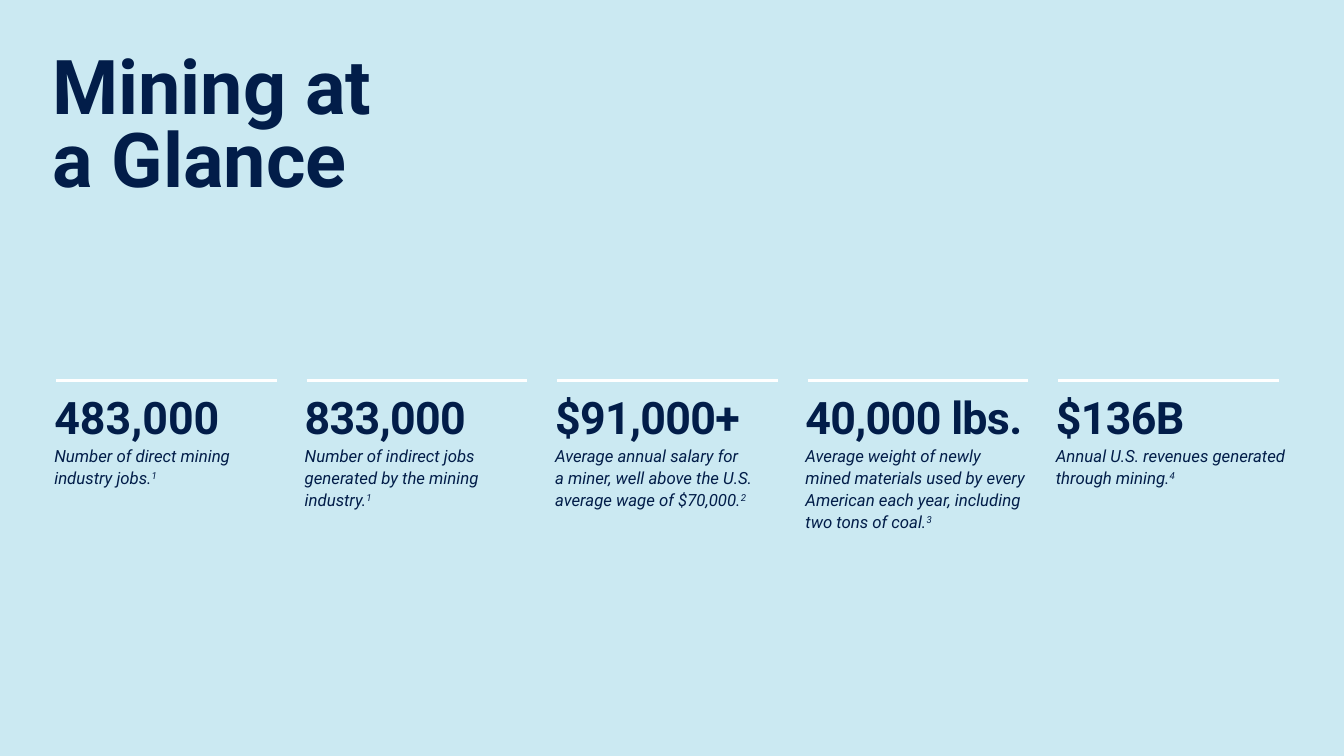
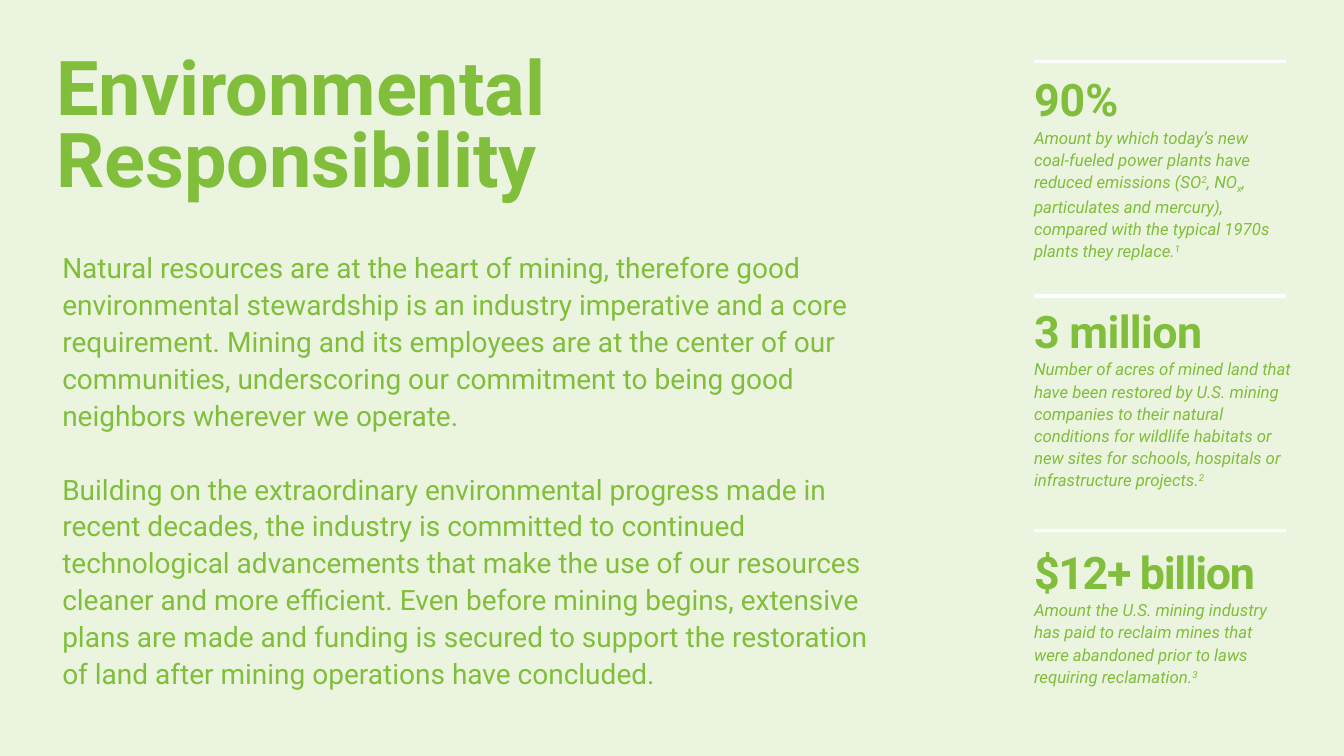
from dataclasses import dataclass
from typing import Any, NamedTuple

from pptx import Presentation
from pptx.dml.color import RGBColor
from pptx.enum.shapes import MSO_CONNECTOR
from pptx.enum.text import MSO_AUTO_SIZE
from pptx.oxml.ns import qn
from pptx.util import Cm, Pt
from lxml import etree

STRAIGHT = MSO_CONNECTOR.STRAIGHT
FIT_SHAPE = MSO_AUTO_SIZE.SHAPE_TO_FIT_TEXT
SUPERSCRIPT = 30
SUBSCRIPT = -25


@dataclass(frozen=True)
class Theme:
    font: str = "Roboto"
    navy: RGBColor = RGBColor(0x02, 0x1D, 0x49)
    pale_blue: RGBColor = RGBColor(0xCB, 0xE9, 0xF2)
    green: RGBColor = RGBColor(0x80, 0xBE, 0x3B)
    pale_green: RGBColor = RGBColor(0xEB, 0xF4, 0xDE)
    rule: RGBColor = RGBColor(0xFF, 0xFF, 0xFF)
    rule_width: Pt = Pt(2.25)
    title_size: Pt = Pt(54)
    figure_size: Pt = Pt(32)
    body_size: Pt = Pt(20)
    caption_size: Pt = Pt(12)
    body_gap: Pt = Pt(26.4)


THEME = Theme()


class Style(NamedTuple):
    font: dict[str, Any]
    paragraph: dict[str, Any]


TITLE = Style({"size": THEME.title_size, "bold": True}, {"line_spacing": 0.8})
FIGURE = Style({"size": THEME.figure_size, "bold": True}, {})
CAPTION = Style({"size": THEME.caption_size, "italic": True}, {"line_spacing": 1.1})
BODY = Style({"size": THEME.body_size}, {"line_spacing": 1.1})
BODY_NEXT = Style(BODY.font, {"line_spacing": 1.1, "space_before": THEME.body_gap})


class Piece(NamedTuple):
    text: str
    baseline: int = 0


class Block(NamedTuple):
    pieces: list[Piece]
    style: Style
    tracking: float = 0


class Box(NamedTuple):
    left: float
    top: float
    width: float
    height: float


@dataclass(frozen=True)
class Stat:
    figure: str
    caption: list[Piece]
    width: float
    height: float
    tracking: float = -0.5
    top: float = 9.7


def noted(text: str, note: str) -> list[Piece]:
    return [Piece(text), Piece(note, SUPERSCRIPT)]


GLANCE_STATS = [
    Stat("483,000", noted("Number of direct mining industry jobs.", "1"),
         5.77, 2.72, tracking=0),
    Stat("833,000", noted("Number of indirect jobs generated by the mining industry.", "1"),
         5.94, 3.28),
    Stat("$91,000+", noted("Average annual salary for\na miner, well above the U.S. "
                           "average wage of $70,000.", "2"), 5.94, 3.28),
    Stat("40,000 lbs.", noted("Average weight of newly\nmined materials used by every "
                              "American each year, including two tons of coal.", "3"),
         6.53, 3.86),
    Stat("$136B", noted("Annual U.S. revenues generated through mining.", "4"), 6.53, 2.74),
]

ENVIRONMENT_STATS = [
    Stat("90%", [
        Piece("Amount by which today’s new coal-fueled power plants have "
              "reduced emissions (SO"),
        Piece("2", SUPERSCRIPT),
        Piece(", NO"),
        Piece("x", SUBSCRIPT),
        Piece(", particulates and mercury), compared with the typical 1970s "
              "plants they replace."),
        Piece("1", SUPERSCRIPT),
    ], 6.6, 5, tracking=0, top=1.68),
    Stat("3 million", noted("Number of acres of mined land that have been restored by "
                            "U.S. mining companies to their natural conditions for "
                            "wildlife habitats or new sites for schools, hospitals or "
                            "infrastructure projects.", "2"), 6.99, 5, top=7.52),
    Stat("$12+ billion", noted("Amount the U.S. mining industry has paid to reclaim mines "
                               "that were abandoned prior to laws requiring reclamation.",
                               "3"), 6.76, 3.86, tracking=-1, top=13.59),
]

STEWARDSHIP = (
    "Natural resources are at the heart of mining, therefore good environmental "
    "stewardship is an industry imperative and a core requirement. Mining and its "
    "employees are at the center of our communities, underscoring our commitment to "
    "being good neighbors wherever we operate."
)
PROGRESS = (
    "Building on the extraordinary environmental progress made in recent decades, the "
    "industry is committed to continued technological advancements that make the use of "
    "our resources cleaner and more efficient. Even before mining begins, extensive plans "
    "are made and funding is secured to support the restoration of land after mining "
    "operations have concluded."
)


def apply(target: Any, values: dict[str, Any]) -> None:
    for name, value in values.items():
        setattr(target, name, value)


def add_run(paragraph: Any, text: str, baseline: int, block: Block, color: RGBColor) -> None:
    run = paragraph.add_run()
    run.text = text
    apply(run.font, {"name": THEME.font, **block.style.font})
    run.font.color.rgb = color
    properties = run._r.get_or_add_rPr()
    if baseline:
        properties.set("baseline", str(baseline * 1000))
    if block.tracking:
        properties.set("spc", str(round(block.tracking * 100)))


def add_text(slide: Any, box: Box, blocks: list[Block], color: RGBColor) -> None:
    frame = slide.shapes.add_textbox(*map(Cm, box)).text_frame
    apply(frame, {"word_wrap": True, "auto_size": FIT_SHAPE})
    for index, block in enumerate(blocks):
        paragraph = frame.add_paragraph() if index else frame.paragraphs[0]
        apply(paragraph, block.style.paragraph)
        for piece in block.pieces:
            for line_index, line in enumerate(piece.text.split("\n")):
                if line_index:
                    paragraph.add_line_break()
                add_run(paragraph, line, piece.baseline, block, color)


def add_rule(slide: Any, left: float, top: float, width: float) -> None:
    rule = slide.shapes.add_connector(
        STRAIGHT, Cm(left), Cm(top), Cm(left + width), Cm(top))
    rule.line.color.rgb = THEME.rule
    rule.line.width = THEME.rule_width
    etree.SubElement(rule.element.spPr, qn("a:effectLst"))


def add_stat(slide: Any, stat: Stat, left: float, color: RGBColor) -> None:
    blocks = [Block([Piece(stat.figure)], FIGURE, stat.tracking),
              Block(stat.caption, CAPTION)]
    add_text(slide, Box(left, stat.top, stat.width, stat.height), blocks, color)


def add_slide(presentation: Any, title: str, box: Box,
              background: RGBColor, color: RGBColor) -> Any:
    slide = presentation.slides.add_slide(presentation.slide_layouts[6])
    slide.background.fill.solid()
    slide.background.fill.fore_color.rgb = background
    add_text(slide, box, [Block([Piece(title)], TITLE)], color)
    return slide


def build_glance(presentation: Any) -> None:
    slide = add_slide(presentation, "Mining at\na Glance", Box(1.07, 1.3, 11.23, 4.04),
                      THEME.pale_blue, THEME.navy)
    for column, stat in enumerate(GLANCE_STATS):
        left = 1.42 + 6.31 * column
        add_rule(slide, left, 9.58, 5.56)
        add_stat(slide, stat, left - 0.3, THEME.navy)


def build_environment(presentation: Any) -> None:
    slide = add_slide(presentation, "Environmental Responsibility",
                      Box(1.17, 1.32, 21.06, 4.04), THEME.pale_green, THEME.green)
    add_text(slide, Box(1.32, 6.1, 21.29, 11.53),
             [Block([Piece(STEWARDSHIP)], BODY), Block([Piece(PROGRESS)], BODY_NEXT)],
             THEME.green)
    for row, stat in enumerate(ENVIRONMENT_STATS):
        add_rule(slide, 26.06, 1.55 + 5.91 * row, 6.35)
        add_stat(slide, stat, 25.81, THEME.green)


def main() -> None:
    presentation = Presentation()
    apply(presentation, {"slide_width": Cm(33.87), "slide_height": Cm(19.05)})
    build_glance(presentation)
    build_environment(presentation)
    presentation.save("out.pptx")


if __name__ == "__main__":
    main()
